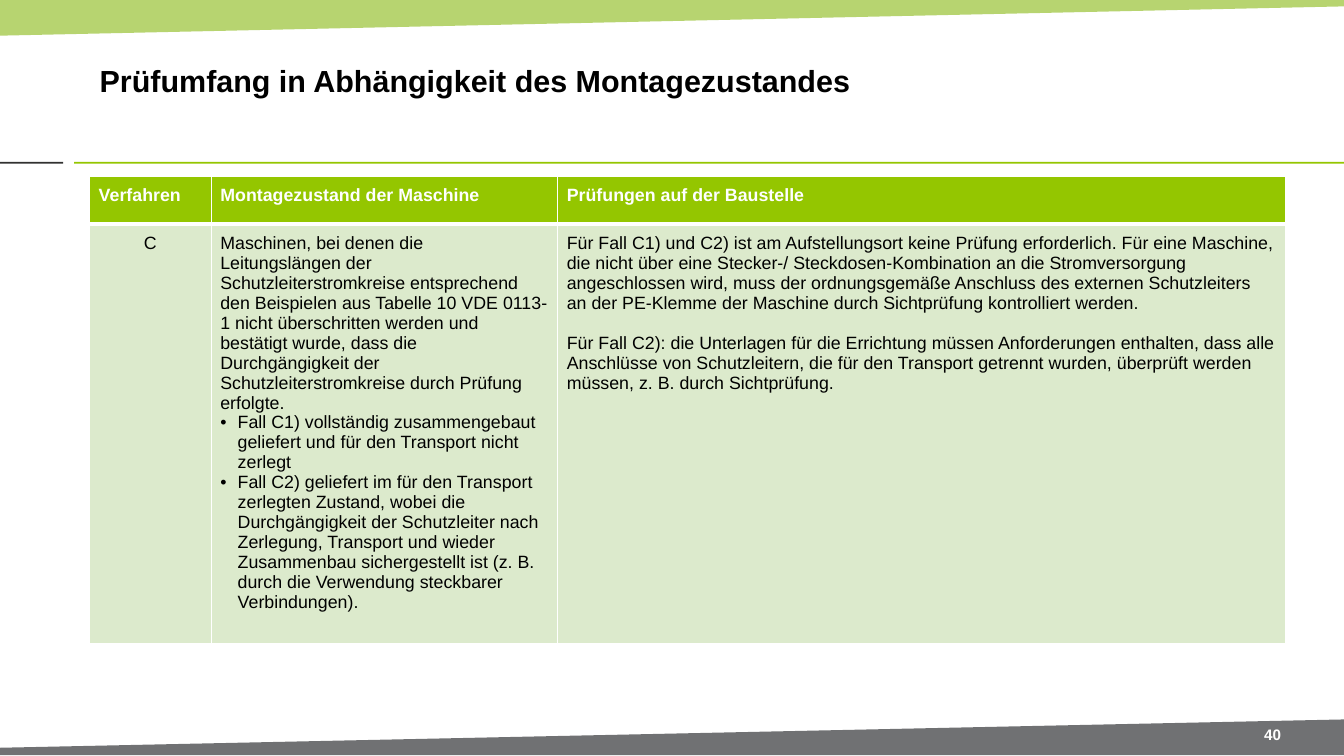
from lxml import etree
from pptx import Presentation
from pptx.dml.color import RGBColor
from pptx.enum import shapes, text
from pptx.oxml import ns
from pptx.util import Inches, Pt

WIDE, HIGH = 14.7, 8.27
GREEN, PALE, WHITE, BLACK = "94C600", "DCEACC", "FFFFFF", "000000"
LEFT, MID = text.PP_ALIGN.LEFT, text.PP_ALIGN.CENTER


def paint(form, tone):
    """Give a fill, line or font colour format a hex colour."""
    form.rgb = RGBColor.from_string(tone)


def sub(node, tag, **attrs):
    return etree.SubElement(node, ns.qn(tag), attrs)


def apply(item, form):
    for name, value in form.items():
        setattr(item, name, value)


class Page:
    face = "Arial"
    pads = dict(zip(("margin_left", "margin_top", "margin_right", "margin_bottom"),
                    map(Inches, (0.11, 0.06, 0.11, 0.06))))

    def __init__(self, deck):
        self.slide = deck.slides.add_slide(deck.slide_layouts[5])
        self.shapes = self.slide.shapes

    def place(self, shape, box):
        apply(shape, dict(zip(("left", "top", "width", "height"), map(Inches, box))))

    def style(self, para, words, size, tone, bold=False, align=LEFT):
        para.text = words
        para.alignment = align
        apply(para.font, {"name": self.face, "size": Pt(size), "bold": bold})
        paint(para.font.color, tone)

    def frame(self, shape, words, size, tone, align=LEFT):
        apply(shape.text_frame, {**self.pads, "word_wrap": True,
                                 "auto_size": text.MSO_AUTO_SIZE.NONE,
                                 "vertical_anchor": text.MSO_ANCHOR.MIDDLE})
        self.style(shape.text_frame.paragraphs[0], words, size, tone, True, align)

    def title(self, words, box):
        self.place(self.shapes.title, box)
        self.frame(self.shapes.title, words, 24, BLACK)

    def label(self, words, box):
        self.frame(self.shapes.add_textbox(*map(Inches, box)), words, 12, WHITE, MID)

    def finish(self, shape, tone):
        shape.shadow.inherit = False
        shape.fill.solid()
        paint(shape.fill.fore_color, tone)
        shape.line.fill.background()

    def rule(self, left, width, tone):
        box = map(Inches, (left, 1.77, width, 0.02))
        self.finish(self.shapes.add_shape(shapes.MSO_SHAPE.RECTANGLE, *box), tone)

    def band(self, points, tone, alpha=None):
        first, *rest = [(Inches(x), Inches(y)) for x, y in points]
        pen = self.shapes.build_freeform(*first)
        pen.add_line_segments(rest, close=True)
        shape = pen.convert_to_shape()
        self.finish(shape, tone)
        if alpha:
            hue = shape._element.spPr.find(".//" + ns.qn("a:srgbClr"))
            sub(hue, "a:alpha", val=str(alpha * 1000))

    def bullet(self, para):
        props = para._p.get_or_add_pPr()
        props.set("marL", str(Inches(0.19)))
        props.set("indent", str(-Inches(0.19)))
        sub(props, "a:buFont", typeface=self.face)
        sub(props, "a:buChar", char="•")

    def border(self, cell, base):
        props = cell._tc.get_or_add_tcPr()
        for spot, side in enumerate("LRTB"):
            width = Pt(base if side == "B" else 1)
            line = sub(props, f"a:ln{side}", w=str(width))
            sub(sub(line, "a:solidFill"), "a:srgbClr", val=WHITE)
            props.insert(spot, line)

    def cell(self, cell, paras, head, align):
        apply(cell, dict.fromkeys(self.pads, Inches(0.1)))
        cell.fill.solid()
        paint(cell.fill.fore_color, GREEN if head else PALE)
        self.border(cell, 3 if head else 1)
        for n, words in enumerate(paras):
            para = cell.text_frame.add_paragraph() if n else cell.text_frame.paragraphs[0]
            if words.startswith("• "):
                self.bullet(para)
                words = words[2:]
            elif n:
                para.space_before = Pt(16)
            self.style(para, words, 14, WHITE if head else BLACK, head, align)

    def table(self, spot, cols, rows, data):
        box = map(Inches, (*spot, sum(cols), sum(rows)))
        grid = self.shapes.add_table(len(rows), len(cols), *box).table
        for col, width in zip(grid.columns, cols):
            col.width = Inches(width)
        for row, high in zip(grid.rows, rows):
            row.height = Inches(high)
        for r, line in enumerate(data):
            for c, paras in enumerate(line):
                self.cell(grid.cell(r, c), paras, r == 0, MID if r and not c else LEFT)


HEAD = [["Verfahren"], ["Montagezustand der Maschine "], ["Prüfungen auf der Baustelle"]]
STATE = [
    "Maschinen, bei denen die Leitungslängen der Schutzleiterstromkreise entsprechend "
    "den Beispielen aus Tabelle 10 VDE 0113-1 nicht überschritten werden und bestätigt "
    "wurde, dass die Durchgängigkeit der Schutzleiterstromkreise durch Prüfung erfolgte.",
    "• Fall C1) vollständig zusammengebaut geliefert und für den Transport nicht zerlegt",
    "• Fall C2) geliefert im für den Transport zerlegten Zustand, wobei die "
    "Durchgängigkeit der Schutzleiter nach Zerlegung, Transport und wieder Zusammenbau "
    "sichergestellt ist (z. B. durch die Verwendung steckbarer Verbindungen).",
]
TESTS = [
    "Für Fall C1) und C2) ist am Aufstellungsort keine Prüfung erforderlich. Für eine "
    "Maschine, die nicht über eine Stecker-/ Steckdosen-Kombination an die "
    "Stromversorgung angeschlossen wird, muss der ordnungsgemäße Anschluss des externen "
    "Schutzleiters an der PE-Klemme der Maschine durch Sichtprüfung kontrolliert werden.",
    "Für Fall C2): die Unterlagen für die Errichtung müssen Anforderungen enthalten, "
    "dass alle Anschlüsse von Schutzleitern, die für den Transport getrennt wurden, "
    "überprüft werden müssen, z. B. durch Sichtprüfung.",
]


def main():
    deck = Presentation()
    deck.slide_width, deck.slide_height = Inches(WIDE), Inches(HIGH)
    page = Page(deck)

    # Slanted bands and rules
    page.band([(0, 0), (WIDE, 0), (WIDE, 0.07), (0, 0.39)], "95C02A", 67)
    page.band([(WIDE, 8.26), (0, 8.26), (0, 8.18), (WIDE, 7.87)], "707173")
    page.rule(0, 0.69, "313130")
    page.rule(0.81, WIDE - 0.81, GREEN)

    # Title and page number
    page.title("Prüfumfang in Abhängigkeit des Montagezustandes", (0.98, 0.28, 11.54, 1.19))
    page.label("40", (13.49, 7.89, 0.86, 0.29))

    # Table of tests
    page.table((0.98, 1.93), (1.33, 3.79, 7.96), (0.52, 4.59), [HEAD, [["C"], STATE, TESTS]])

    deck.save("out.pptx")


if __name__ == "__main__":
    main()
